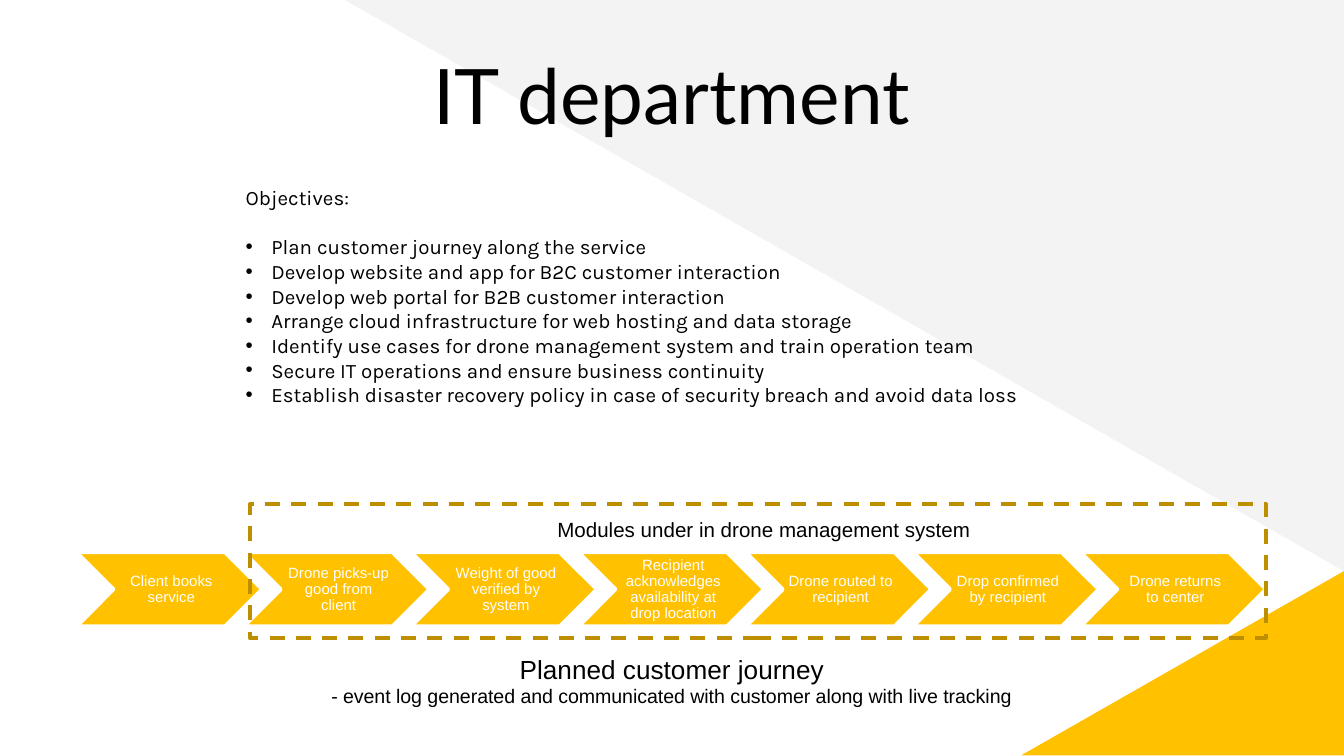
from pptx import Presentation
from pptx.dml.color import RGBColor
from pptx.enum.dml import MSO_LINE
from pptx.enum.shapes import MSO_SHAPE
from pptx.enum.text import MSO_ANCHOR, PP_ALIGN
from pptx.oxml.xmlchemy import OxmlElement
from pptx.util import Inches, Pt

TRIANGLE = MSO_SHAPE.RIGHT_TRIANGLE
CHEVRON = MSO_SHAPE.CHEVRON
RECTANGLE = MSO_SHAPE.RECTANGLE
DASH = MSO_LINE.DASH
MIDDLE = MSO_ANCHOR.MIDDLE
LEFT = PP_ALIGN.LEFT
CENTER = PP_ALIGN.CENTER

YELLOW, GOLD, GREY = "FFC100", "BD8F00", "F3F3F3"
WHITE, BLACK = "FFFFFF", "000000"

OBJECTIVES = [
    "Plan customer journey along the service",
    "Develop website and app for B2C customer interaction",
    "Develop web portal for B2B customer interaction",
    "Arrange cloud infrastructure for web hosting and data storage",
    "Identify use cases for drone management system and train operation team",
    "Secure IT operations and ensure business continuity",
    "Establish disaster recovery policy in case of security breach and avoid data loss",
]
JOURNEY_STEPS = [
    "Client books service",
    "Drone picks-up good from client",
    "Weight of good verified by system",
    "Recipient acknowledges availability at drop location",
    "Drone routed to recipient",
    "Drop confirmed by recipient",
    "Drone returns to center",
]
STEP_LEFT, LAST_STEP_LEFT = 0.57, 8.04
STEP_PITCH = (LAST_STEP_LEFT - STEP_LEFT) / (len(JOURNEY_STEPS) - 1)


def color(hex_string):
    """Return the colour for a hex string."""
    return RGBColor.from_string(hex_string)


def set_insets(frame, left, top, right, bottom):
    """Set the text margins of a frame in inches."""
    frame.margin_left, frame.margin_top = Inches(left), Inches(top)
    frame.margin_right, frame.margin_bottom = Inches(right), Inches(bottom)


def style_paragraph(paragraph, text, size, font, hex_string, alignment):
    """Fill a paragraph with text in one style."""
    paragraph.text = text
    paragraph.alignment = alignment
    paragraph.font.size = Pt(size)
    paragraph.font.name = font
    paragraph.font.color.rgb = color(hex_string)


def add_shape(slide, kind, box, fill=None, line=None):
    """Add a flat preset shape with an optional fill and 2 pt line."""
    shape = slide.shapes.add_shape(kind, *map(Inches, box))
    shape.shadow.inherit = False
    if fill:
        shape.fill.solid()
        shape.fill.fore_color.rgb = color(fill)
    else:
        shape.fill.background()
    if line:
        shape.line.color.rgb = color(line)
        shape.line.width = Pt(2)
    else:
        shape.line.fill.background()
    return shape


def add_text(slide, box, lines, font, alignment=CENTER, vertical_inset=0.05):
    """Add a text box with one paragraph for each (text, size) pair."""
    frame = slide.shapes.add_textbox(*map(Inches, box)).text_frame
    frame.word_wrap = True
    set_insets(frame, 0.1, vertical_inset, 0.1, vertical_inset)
    for index, (text, size) in enumerate(lines):
        paragraph = frame.add_paragraph() if index else frame.paragraphs[0]
        style_paragraph(paragraph, text, size, font, BLACK, alignment)
    return frame


def indent(paragraph, margin, first_line=0, bullet=None):
    """Set the indents of a paragraph and an optional bullet."""
    properties = paragraph._p.get_or_add_pPr()
    properties.set("marL", str(Inches(margin)))
    properties.set("indent", str(Inches(first_line)))
    if bullet:
        for tag, name, value in (("a:buFont", "typeface", "Arial"), ("a:buChar", "char", bullet)):
            element = OxmlElement(tag)
            element.set(name, value)
            properties.insert_element_before(element, "a:tabLst", "a:defRPr", "a:extLst")


def add_background(slide):
    """Add the two corner triangles."""
    add_shape(slide, TRIANGLE, (2.55, -0.01, 7.45, 4.26), GREY).rotation = 180
    corner = add_shape(slide, TRIANGLE, (7.6, 4.25, 2.4, 1.37), YELLOW)
    corner._element.spPr.xfrm.set("flipH", "1")


def add_objectives(slide):
    """Add the objectives heading and its bulleted list."""
    lines = [(text, 11) for text in ["Objectives:", *OBJECTIVES]]
    frame = add_text(slide, (1.58, 1.28, 6.85, 2.26), lines, "Karla", LEFT, 0.1)
    heading, *items = frame.paragraphs
    indent(heading, 0.15)
    heading.space_after = Pt(13)
    for item in items:
        indent(item, 0.34, -0.19, "•")


def add_step(slide, index, text):
    """Add one labelled chevron of the customer journey."""
    box = (STEP_LEFT + index * STEP_PITCH, 4.11, 1.38, 0.55)
    chevron = add_shape(slide, CHEVRON, box, YELLOW, WHITE)
    frame = chevron.text_frame
    frame.word_wrap = True
    frame.vertical_anchor = MIDDLE
    set_insets(frame, 0.04, 0.01, 0.01, 0.01)
    paragraph = frame.paragraphs[0]
    style_paragraph(paragraph, text, 8, "Arial", WHITE, CENTER)
    paragraph.line_spacing = 0.9


def main():
    """Build the slide and save it."""
    presentation = Presentation()
    presentation.slide_width = Inches(10)
    presentation.slide_height = Inches(10 * 9 / 16)
    slide = presentation.slides.add_slide(presentation.slide_layouts[6])

    add_background(slide)
    add_text(slide, (0.57, 0.26, 8.86, 0.63), [("IT department", 41)], "Lato", vertical_inset=0.1)
    add_objectives(slide)
    for index, text in enumerate(JOURNEY_STEPS):
        add_step(slide, index, text)

    caption = [
        ("Planned customer journey", 14),
        ("- event log generated and communicated with customer along with live tracking", 10.5),
    ]
    add_text(slide, (2.2, 4.81, 5.6, 0.51), caption, "Arial")
    frame = add_shape(slide, RECTANGLE, (1.86, 3.75, 7.56, 1), line=GOLD)
    frame.line.dash_style = DASH
    label = [("Modules under in drone management system", 11)]
    add_text(slide, (3.56, 3.8, 4.25, 0.29), label, "Arial")

    presentation.save("out.pptx")


if __name__ == "__main__":
    main()
